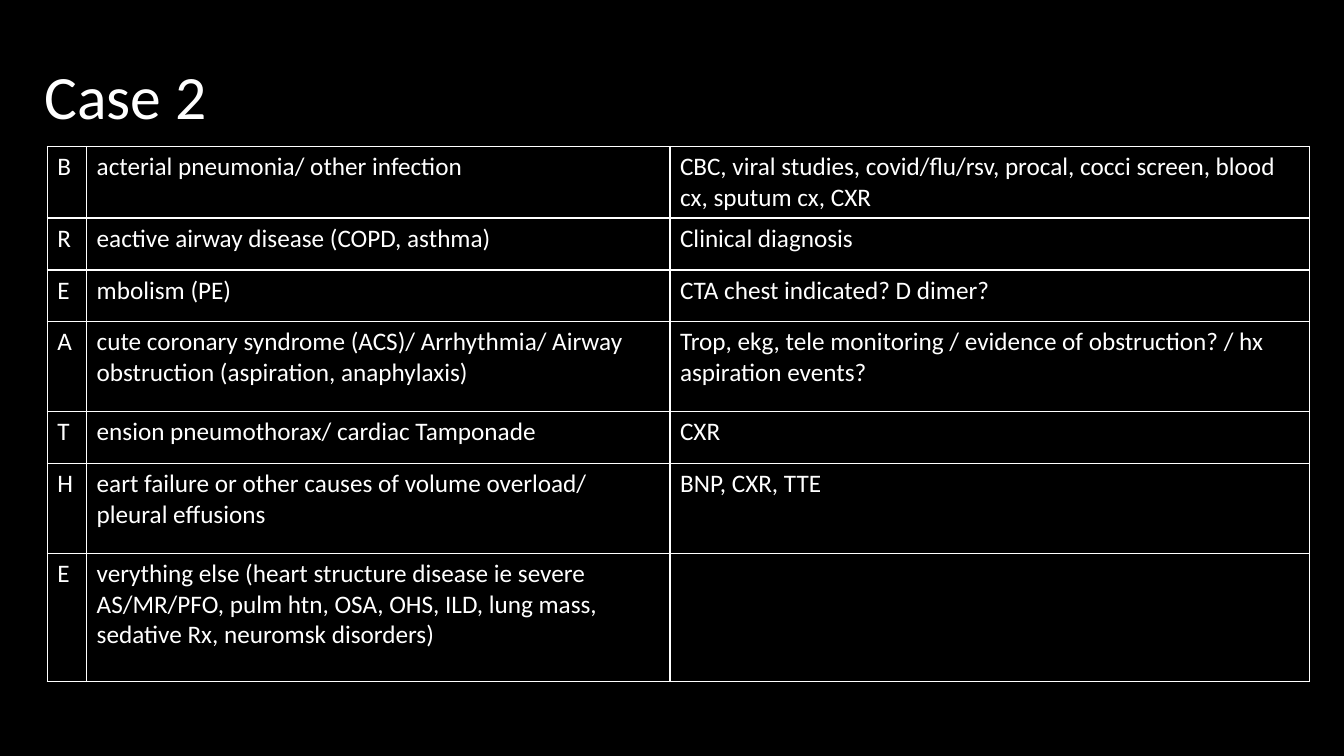
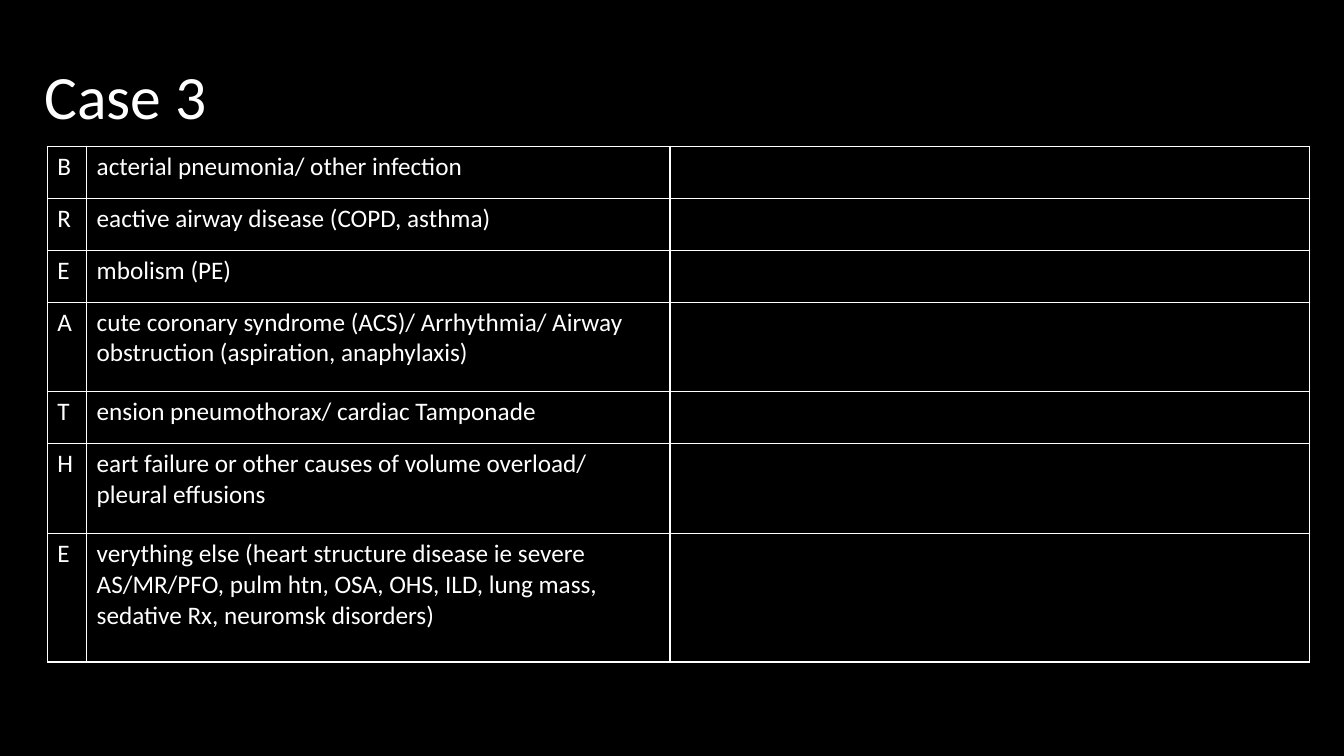
from lxml.etree import SubElement
from pptx import Presentation
from pptx.dml.color import RGBColor
from pptx.enum.text import MSO_ANCHOR, PP_ALIGN
from pptx.oxml.ns import qn
from pptx.util import Pt

COLORS = {"background": "000000", "text": "FFFFFF", "border": "FFFFFF"}
FONT = "Calibri"
TITLE_BOX = (24.5, 18.7, 828, 104.4)
TABLE_BOX = (33.8, 104.6, 901.8, 369.5)
COLUMN_WIDTHS = (28.1, 416.7, 457)
ROW_HEIGHTS = (37.1, 37.1, 37.1, 64.1, 37.1, 64.1, 91.8)
CAUSES = (
    ("B", "acterial pneumonia/ other infection"),
    ("R", "eactive airway disease (COPD, asthma)"),
    ("E", "mbolism (PE)"),
    ("A", "cute coronary syndrome (ACS)/ Arrhythmia/ Airway obstruction (aspiration, anaphylaxis)"),
    ("T", "ension pneumothorax/ cardiac Tamponade"),
    ("H", "eart failure or other causes of volume overload/ pleural effusions"),
    ("E", "verything else (heart structure disease ie severe AS/MR/PFO, pulm htn, OSA, OHS, ILD, "
          "lung mass, sedative Rx, neuromsk disorders)"),
)
CASES = {
    "Case 2": (
        "CBC, viral studies, covid/flu/rsv, procal, cocci screen, blood cx, sputum cx, CXR",
        "Clinical diagnosis",
        "CTA chest indicated? D dimer?",
        "Trop, ekg, tele monitoring / evidence of obstruction? / hx aspiration events?",
        "CXR",
        "BNP, CXR, TTE",
        "",
    ),
    "Case 3": ("",) * len(CAUSES),
}


def color(name):
    """Return the named colour of the deck."""
    return RGBColor.from_string(COLORS[name])


def format_text(text_frame, size):
    """Give every run the deck's font and text colour."""
    for para in text_frame.paragraphs:
        for span in para.runs:
            span.font.name = FONT
            span.font.size = Pt(size)
            span.font.color.rgb = color("text")


def add_borders(cell):
    """Draw a thin line on all four sides of a cell."""
    properties = cell._tc.get_or_add_tcPr()
    for side in ("a:lnL", "a:lnR", "a:lnT", "a:lnB"):
        line = SubElement(properties, qn(side), w=str(Pt(1)))
        fill = SubElement(line, qn("a:solidFill"))
        SubElement(fill, qn("a:srgbClr"), val=COLORS["border"])


def place_title(page, title, box):
    """Place the slide's title in the given box."""
    shape = page.shapes.title
    shape.left, shape.top, shape.width, shape.height = map(Pt, box)
    frame = shape.text_frame
    frame.text = title
    frame.vertical_anchor = MSO_ANCHOR.MIDDLE
    frame.paragraphs[0].alignment = PP_ALIGN.LEFT
    frame.paragraphs[0].line_spacing = 0.9
    format_text(frame, 44)


def place_table(page, workup, box):
    """Place the table of causes and their workup in the given box."""
    table = page.shapes.add_table(len(CAUSES), len(COLUMN_WIDTHS), *map(Pt, box)).table
    table.first_row = table.horz_banding = False
    for column, width in zip(table.columns, COLUMN_WIDTHS):
        column.width = Pt(width)
    for row, height, cause, tests in zip(table.rows, ROW_HEIGHTS, CAUSES, workup):
        row.height = Pt(height)
        for cell, text in zip(row.cells, (*cause, tests)):
            add_borders(cell)
            cell.fill.solid()
            cell.fill.fore_color.rgb = color("background")
            cell.text_frame.text = text
            format_text(cell.text_frame, 18)


def add_case(deck, title, workup):
    """Add one case slide with its title and table."""
    page = deck.slides.add_slide(deck.slide_layouts.get_by_name("Title Only"))
    place_title(page, title, TITLE_BOX)
    place_table(page, workup, TABLE_BOX)


def main():
    """Build and save the deck."""
    deck = Presentation()
    deck.slide_width, deck.slide_height = Pt(960), Pt(540)
    background = deck.slide_master.background.fill
    background.solid()
    background.fore_color.rgb = color("background")
    for title, workup in CASES.items():
        add_case(deck, title, workup)
    deck.save("out.pptx")


if __name__ == "__main__":
    main()
